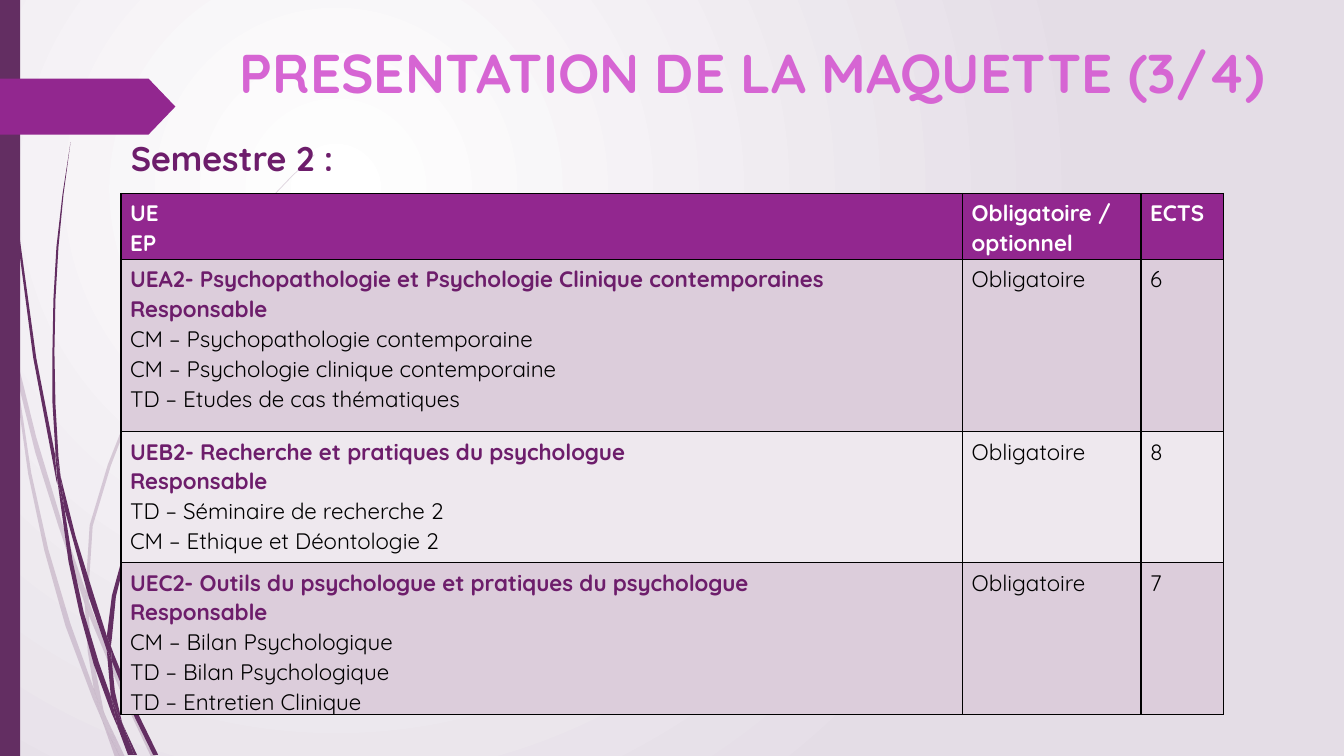
import pptx
import pptx.dml.color
import pptx.enum.shapes
import pptx.enum.text
import pptx.oxml
import pptx.oxml.ns
import pptx.util

Pt = pptx.util.Pt
FONT = "Quicksand"
PLUM, VIOLET, ORCHID, GRAPE = "632E62", "92278F", "D665D3", "6D1D6B"
WHITE, BLACK, MIST = "FFFFFF", "000000", "E4DDE6"
BANDS = ["DCCDDB", "EEE8EE"]

TITLE = "PRESENTATION DE LA MAQUETTE (3/4)"
SEMESTER = "Semestre 2 :"
HEADER = (["UE", "EP"], ["Obligatoire / optionnel"], ["ECTS"])
UNITS = [
    (["UEA2- Psychopathologie et Psychologie Clinique contemporaines", "Responsable",
      "CM – Psychopathologie contemporaine", "CM – Psychologie clinique contemporaine",
      "TD – Etudes de cas thématiques"], "Obligatoire", "6"),
    (["UEB2- Recherche et pratiques du psychologue", "Responsable",
      "TD – Séminaire de recherche 2", "CM – Ethique et Déontologie 2"], "Obligatoire", "8"),
    (["UEC2- Outils du psychologue et pratiques du psychologue", "Responsable",
      "CM – Bilan Psychologique", "TD – Bilan Psychologique",
      "TD – Entretien Clinique"], "Obligatoire", "7"),
]
COLUMN_WIDTHS = [601.2, 127.4, 59]
ROW_HEIGHTS = [43.9, 123.1, 93.6, 96.5]

GRASS_UNIT = Pt(0.72)
PALE_GRASS = [
    [(11, 350), (9, 322), (0, 282), (0, 299), (10, 344)],
    [(58, 522), (84, 599), (85, 586), (62, 520), (36, 434), (14, 345), (17, 376), (35, 449)],
    [(92, 607), (88, 596), (88, 610), (123, 694), (150, 751), (155, 751), (127, 692)],
    [(119, 751), (124, 751), (105, 711)],
    [(93, 683), (70, 619), (48, 545), (31, 469), (17, 376), (11, 350), (28, 470), (44, 546),
     (65, 621), (92, 693), (101, 714), (99, 707)],
    [(84, 599), (87, 646), (93, 683), (96, 692), (105, 711), (103, 706), (91, 646),
     (88, 610), (88, 608)],
    [(88, 584), (92, 522), (110, 462), (132, 405), (160, 349), (193, 295), (229, 245),
     (268, 198), (290, 175), (312, 154), (312, 153), (289, 175), (268, 197), (228, 244),
     (191, 294), (158, 348), (130, 403), (107, 461), (89, 521), (85, 584), (85, 586), (88, 596)],
    [(101, 714), (114, 751), (119, 751)],
    [(88, 608), (88, 610), (88, 596), (85, 586), (84, 599)],
    [(96, 692), (93, 683), (99, 707), (101, 714), (119, 751), (105, 711)],
]
DARK_GRASS = [
    [(7, 110), (17, 233), (33, 355), (56, 477), (57, 481), (55, 457), (55, 453), (36, 355),
     (19, 232), (8, 109), (5, 48), (4, 0), (3, 0), (4, 48)],
    [(88, 592), (106, 645), (106, 631), (93, 590), (75, 532), (60, 472), (64, 505)],
    [(113, 649), (110, 641), (111, 656), (132, 708), (152, 749), (157, 749), (136, 706)],
    [(110, 691), (98, 657), (83, 607), (72, 556), (64, 505), (57, 477), (68, 557), (79, 608),
     (93, 659), (111, 708), (117, 722), (116, 717)],
    [(60, 472), (58, 453), (55, 401), (54, 349), (55, 297), (58, 245), (63, 193), (70, 141),
     (62, 193), (56, 245), (53, 297), (52, 349), (52, 399), (55, 449)],
    [(133, 749), (136, 749), (122, 719)],
    [(57, 477), (64, 505), (60, 472), (55, 449), (55, 453)],
    [(111, 633), (115, 592), (125, 552), (140, 513), (158, 476), (180, 440), (205, 406),
     (231, 374), (245, 359), (261, 344), (260, 344), (245, 358), (231, 373), (204, 405),
     (179, 439), (156, 474), (137, 512), (122, 551), (111, 591), (106, 631), (110, 641)],
    [(117, 722), (127, 749), (131, 749)],
    [(106, 645), (110, 691), (116, 706), (122, 719), (121, 716), (114, 686), (111, 656), (109, 651)],
    [(106, 645), (109, 651), (111, 656), (110, 641), (106, 631)],
    [(116, 706), (110, 691), (116, 717), (117, 722), (130, 749), (133, 749), (122, 719)],
]


def color(value):
    return pptx.dml.color.RGBColor.from_string(value)


def paint(shape, value):
    shape.fill.solid()
    shape.fill.fore_color.rgb = color(value)
    shape.line.fill.background()
    shape.shadow.inherit = False


def write(paragraph, text, size, value, bold):
    run = paragraph.add_run()
    run.text = text
    run.font.name, run.font.size, run.font.bold = FONT, Pt(size), bold
    run.font.color.rgb = color(value)


def add_text(left, top, width, height, text, size, value, align):
    frame = slide.shapes.add_textbox(Pt(left), Pt(top), Pt(width), Pt(height)).text_frame
    frame.word_wrap = True
    frame.paragraphs[0].alignment = align
    write(frame.paragraphs[0], text, size, value, True)


def add_blade(points, alpha):
    outline = slide.shapes.build_freeform(*points[0], scale=GRASS_UNIT)
    outline.add_line_segments(points[1:], close=True)
    blade = outline.convert_to_shape()
    paint(blade, PLUM)
    if alpha < 100:
        tint = next(blade.element.spPr.iter(pptx.oxml.ns.qn("a:srgbClr")))
        tint.append(pptx.oxml.parse_xml(
            f'<a:alpha {pptx.oxml.ns.nsdecls("a")} val="{alpha * 1000}"/>'))


def fill_cell(cell, lines, band):
    cell.fill.solid()
    cell.fill.fore_color.rgb = color(band)
    cell.margin_left = cell.margin_right = Pt(6.5)
    cell.margin_top = cell.margin_bottom = Pt(3)
    for i, (text, value, bold) in enumerate(lines):
        paragraph = cell.text_frame.paragraphs[0] if i == 0 else cell.text_frame.add_paragraph()
        paragraph.line_spacing = 1.07
        write(paragraph, text, 16, value, bold)
    for i, side in enumerate("LRTB"):
        cell._tc.tcPr.insert(i, pptx.oxml.parse_xml(
            f'<a:ln{side} {pptx.oxml.ns.nsdecls("a")} w="{Pt(1)}"><a:solidFill>'
            f'<a:srgbClr val="{BLACK}"/></a:solidFill></a:ln{side}>'))


deck = pptx.Presentation()
deck.slide_width, deck.slide_height = Pt(960), Pt(540)
slide = deck.slides.add_slide(deck.slide_layouts[6])

backdrop = slide.background.fill
backdrop.gradient()
for stop, position, value in zip(backdrop.gradient_stops, (0, 1), (WHITE, MIST)):
    stop.position = position
    stop.color.rgb = color(value)
direction = next(slide.element.iter(pptx.oxml.ns.qn("a:lin")))
direction.getparent().replace(direction, pptx.oxml.parse_xml(
    f'<a:path {pptx.oxml.ns.nsdecls("a")} path="circle">'
    '<a:fillToRect l="50000" t="50000" r="100000" b="100000"/></a:path>'))

for blades, alpha in ((PALE_GRASS, 20), (DARK_GRASS, 100)):
    for points in blades:
        add_blade(points, alpha)

PRESETS = pptx.enum.shapes.MSO_SHAPE
side_band = slide.shapes.add_shape(PRESETS.RECTANGLE, 0, 0, Pt(14.4), Pt(540))
paint(side_band, PLUM)
page_arrow = slide.shapes.add_shape(PRESETS.PENTAGON, 0, Pt(56.2), Pt(125.3), Pt(39.9))
page_arrow.adjustments[0] = 0.48
paint(page_arrow, VIOLET)

ALIGN = pptx.enum.text.PP_ALIGN
add_text(142.6, 24.5, 789.8, 100.8, TITLE, 39, ORCHID, ALIGN.CENTER)
add_text(86.4, 94.3, 789.8, 409.7, SEMESTER, 24.4, GRAPE, ALIGN.LEFT)

units = slide.shapes.add_table(
    len(ROW_HEIGHTS), len(COLUMN_WIDTHS), Pt(86.4), Pt(138.2),
    Pt(sum(COLUMN_WIDTHS)), Pt(sum(ROW_HEIGHTS))).table
for column, width in zip(units.columns, COLUMN_WIDTHS):
    column.width = Pt(width)
for row, height in zip(units.rows, ROW_HEIGHTS):
    row.height = Pt(height)
for c, labels in enumerate(HEADER):
    fill_cell(units.cell(0, c), [(label, WHITE, True) for label in labels], VIOLET)
for r, (courses, status, credits) in enumerate(UNITS):
    band = BANDS[r % 2]
    course_lines = [(text, GRAPE if i < 2 else BLACK, i < 2) for i, text in enumerate(courses)]
    fill_cell(units.cell(r + 1, 0), course_lines, band)
    fill_cell(units.cell(r + 1, 1), [(status, BLACK, False)], band)
    fill_cell(units.cell(r + 1, 2), [(credits, BLACK, False)], band)

deck.save("out.pptx")
